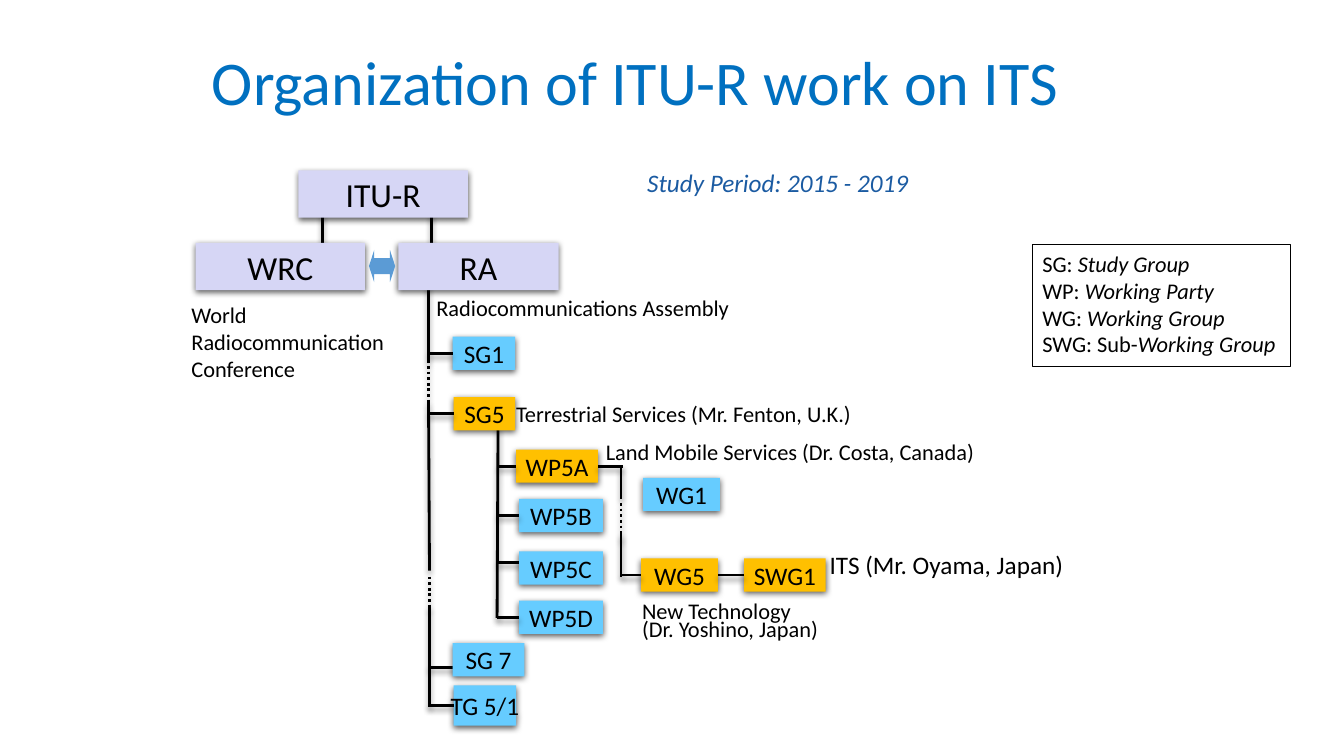
from lxml.etree import SubElement
from pptx import Presentation
from pptx.dml.color import RGBColor
from pptx.enum.dml import MSO_LINE
from pptx.enum.shapes import MSO_CONNECTOR, MSO_SHAPE
from pptx.enum.text import MSO_ANCHOR, MSO_AUTO_SIZE, PP_ALIGN
from pptx.oxml.ns import qn
from pptx.util import Pt

PX = 9144  # one px is a hundredth of an inch
FONT = "Calibri"
COLORS = {"black": "000000", "title": "0070C0", "period": "1B5BA2", "lilac": "D6D6F5",
          "sky": "66CCFF", "amber": "FFC000", "arrow": "5B9BD5"}

# Boxes: label, left, top, width, height, fill, text size
BOXES = [
    ("ITU-R", 296, 169, 168, 47, "lilac", 24),
    ("WRC", 194, 241, 168, 47, "lilac", 24),
    ("RA", 395, 241, 159, 47, "lilac", 24),
    ("SG1", 449, 334, 62, 33, "sky", 18),
    ("SG5", 450, 394, 61, 33, "amber", 18),
    ("SG 7", 449, 638, 71, 33, "sky", 18),
    ("TG 5/1", 450, 680, 62, 40, "sky", 18),
    ("WP5A", 512, 446, 81, 33, "amber", 18),
    ("WP5B", 515, 495, 83, 33, "sky", 18),
    ("WP5C", 515, 547, 83, 33, "sky", 18),
    ("WP5D", 515, 596, 83, 33, "sky", 18),
    ("WG1", 638, 474, 76, 33, "sky", 18),
    ("WG5", 636, 554, 76, 33, "amber", 18),
    ("SWG1", 738, 554, 81, 33, "amber", 18),
]
ARROW = (366, 248, 26, 32)

# Free lines: x1, y1, x2, y2
SOLID_LINES = [
    (320, 209, 320, 241), (428, 209, 428, 241),
    (425, 255, 425, 360), (425, 399, 426, 566), (426, 602, 426, 701),
    (494, 421, 493, 613), (616, 462, 616, 495), (616, 529, 616, 572),
    (425, 662, 454, 662), (493, 558, 517, 558),
]
DOTTED_LINES = [(425, 363, 425, 399), (426, 572, 426, 605), (616, 499, 616, 535)]

# Branches from a trunk at x to the left side of a box
BRANCHES = [(425, "SG1"), (425, "SG5"), (425, "TG 5/1"), (493, "WP5A"),
            (493, "WP5B"), (493, "WP5D"), (616, "WG5")]
WP5A_TRUNK = 618

# Texts: rectangle, paragraphs of (text, italic) runs, size, colour, paragraph format
LEFT, CENTER = {"alignment": PP_ALIGN.LEFT}, {"alignment": PP_ALIGN.CENTER}
TEXTS = [
    ((620, 161, 303, 40), [[("Study Period: 2015 - 2019", True)]], 18, "period", CENTER),
    ((423, 287, 320, 37), [[("Radiocommunications Assembly", False)]], 16, "black", LEFT),
    ((180, 294, 221, 91), [[("World Radiocommunication Conference", False)]], 16, "black", LEFT),
    ((502, 392, 434, 37), [[("Terrestrial Services (Mr. Fenton, U.K.)", False)]], 16, "black", LEFT),
    ((591, 430, 449, 37), [[("Land Mobile Services (Dr. Costa, Canada)", False)]], 16, "black", LEFT),
    ((813, 540, 266, 40), [[("ITS (Mr. Oyama, Japan)", False)]], 18, "black", LEFT),
    ((627, 596, 207, 47), [[("New Technology", False)], [("(Dr. Yoshino, Japan)", False)]],
     16, "black", {"line_spacing": Pt(13)}),
]
TITLE = ((180, 27, 900, 94), [[("Organization of ITU-R work on ITS", False)]], 44.4, "title",
         {"alignment": PP_ALIGN.CENTER, "line_spacing": 0.8})
LEGEND = ((1024, 243, 256, 121), [
    [("SG: ", False), ("Study Group", True)],
    [("WP: ", False), ("Working Party", True)],
    [("WG: ", False), ("Working Group", True)],
    [("SWG: Sub-", False), ("Working Group", True)],
], 16, "black", LEFT)

# Shadows: opacity in percent, blur and distance in points
LINE_SHADOW, BOX_SHADOW = (40, 4, 3), (63, 4.5, 1.5)


def rgb(name):
    return RGBColor.from_string(COLORS[name])


def emu(lengths):
    return [length * PX for length in lengths]


def apply_format(target, values):
    for name, value in values.items():
        setattr(target, name, value)


def add_shadow(shape, opacity, blur, distance):
    properties = shape._element.spPr
    for old in properties.findall(qn("a:effectLst")):
        properties.remove(old)
    effects = SubElement(properties, qn("a:effectLst"))
    shadow = SubElement(effects, qn("a:outerShdw"), blurRad=str(int(Pt(blur))),
                        dist=str(int(Pt(distance))), dir="5400000", rotWithShape="0")
    color = SubElement(shadow, qn("a:srgbClr"), val=COLORS["black"])
    SubElement(color, qn("a:alpha"), val=str(opacity * 1000))


def write_text(frame, paragraphs, size, color, paragraph_format):
    for index, runs in enumerate(paragraphs):
        paragraph = frame.paragraphs[0] if index == 0 else frame.add_paragraph()
        apply_format(paragraph, paragraph_format)
        for text, italic in runs:
            run = paragraph.add_run()
            run.text = text
            apply_format(run.font, {"name": FONT, "size": Pt(size), "italic": italic})
            run.font.color.rgb = rgb(color)


def add_text(slide, rectangle, *content, **frame_format):
    box = slide.shapes.add_textbox(*emu(rectangle))
    apply_format(box.text_frame, {"word_wrap": True, **frame_format})
    write_text(box.text_frame, *content)
    return box


def add_filled(slide, kind, rectangle, fill):
    shape = slide.shapes.add_shape(kind, *emu(rectangle))
    shape.shadow.inherit = False
    shape.fill.solid()
    shape.fill.fore_color.rgb = rgb(fill)
    shape.line.fill.background()
    return shape


def add_line(slide, ends, dash=None):
    line = slide.shapes.add_connector(MSO_CONNECTOR.STRAIGHT, *ends)
    line.line.color.rgb = rgb("black")
    apply_format(line.line, {"width": Pt(2), "dash_style": dash})
    add_shadow(line, *LINE_SHADOW)
    return line


def middle(shape):
    return shape.top + shape.height // 2


def main():
    presentation = Presentation()
    presentation.slide_width, presentation.slide_height = emu((1333, 750))
    slide = presentation.slides.add_slide(presentation.slide_layouts[6])

    # Title
    add_text(slide, *TITLE, vertical_anchor=MSO_ANCHOR.BOTTOM)

    # Trunks and free lines
    for ends in SOLID_LINES:
        add_line(slide, emu(ends))
    for ends in DOTTED_LINES:
        add_line(slide, emu(ends), MSO_LINE.ROUND_DOT)

    # Boxes
    boxes = {}
    for label, *rectangle, fill, size in BOXES:
        box = add_filled(slide, MSO_SHAPE.RECTANGLE, rectangle, fill)
        add_shadow(box, *BOX_SHADOW)
        apply_format(box.text_frame, {"word_wrap": False, "vertical_anchor": MSO_ANCHOR.MIDDLE})
        write_text(box.text_frame, [[(label, False)]], size, "black", CENTER)
        boxes[label] = box

    # Lines joined to boxes
    for trunk, label in BRANCHES:
        box = boxes[label]
        branch = add_line(slide, (trunk * PX, middle(box), box.left, middle(box)))
        branch.end_connect(box, 1)
    party, group, subgroup = boxes["WP5A"], boxes["WG5"], boxes["SWG1"]
    exit_line = add_line(slide, (party.left + party.width, middle(party),
                                 WP5A_TRUNK * PX, middle(party)))
    exit_line.begin_connect(party, 3)
    group_link = add_line(slide, (group.left + group.width, middle(group),
                                  subgroup.left, middle(subgroup)))
    group_link.begin_connect(group, 3)
    group_link.end_connect(subgroup, 1)

    # Double arrow between the conference and the assembly
    arrow = add_filled(slide, MSO_SHAPE.LEFT_RIGHT_ARROW, ARROW, "arrow")
    arrow.adjustments[0], arrow.adjustments[1] = 0.5, 0.2

    # Labels and legend
    for text in TEXTS:
        add_text(slide, *text, auto_size=MSO_AUTO_SIZE.SHAPE_TO_FIT_TEXT)
    legend = add_text(slide, *LEGEND)
    legend.line.color.rgb = rgb("black")
    legend.line.width = Pt(0.75)

    presentation.save("out.pptx")


if __name__ == "__main__":
    main()
